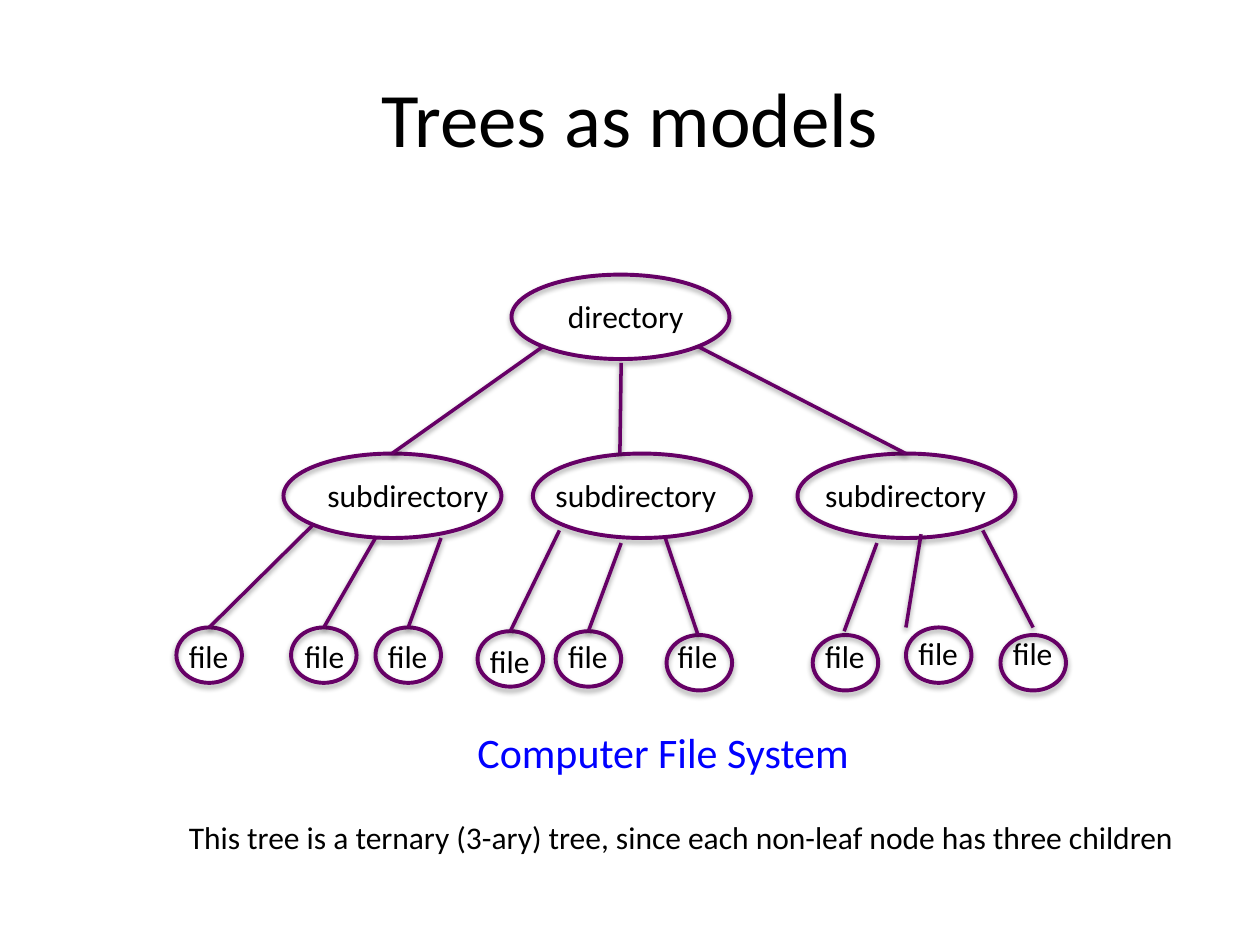
import lxml.etree
import pptx
import pptx.dml.color
import pptx.enum.shapes
import pptx.enum.text
import pptx.oxml.ns
import pptx.util
from pptx.util import Inches

COLOURS = {"text": "000000", "caption": "0000FF", "tree": "660066", "shadow": "000000"}
FONT = "Calibri"
BRANCH_SIZE = (1.73, 0.67)
FILE_SIZE = (0.52, 0.44)
SHADOWS = {
    "node": {"blurRad": 40000, "dist": 23000, "alpha": 35000},
    "edge": {"blurRad": 40000, "dist": 20000, "alpha": 38000},
}
ROOT = ("directory", 2.66, 0, 0.35, 0.13)
SUBDIRECTORIES = [
    ("subdirectory", 0.85, 1.42, 0.25, 0.13),
    ("subdirectory", 2.83, 1.42, 0.08, 0.13),
    ("subdirectory", 4.93, 1.42, 0.12, 0.13),
]
FILES = [
    ("file", 0, 2.8, 0, 0.03),
    ("file", 0.91, 2.8, 0.01, 0.03),
    ("file", 1.58, 2.8, 0, 0.03),
    ("file", 2.39, 2.83, 0, 0.04),
    ("file", 3.01, 2.83, 0, 0),
    ("file", 3.89, 2.86, -0.01, -0.03),
    ("file", 5.05, 2.86, 0, -0.03),
    ("file", 5.79, 2.8, 0, 0),
    ("file", 6.54, 2.86, 0, -0.06),
]
EDGES = [
    (2.91, 0.57, 1.71, 1.42), (3.53, 0.7, 3.52, 1.42), (4.14, 0.57, 5.79, 1.42),
    (1.09, 1.98, 0.26, 2.8), (1.58, 2.09, 1.17, 2.8), (2.1, 2.09, 1.84, 2.8),
    (3.04, 2.03, 2.65, 2.83), (3.53, 2.13, 3.27, 2.83), (3.88, 2.09, 4.14, 2.86),
    (5.56, 2.13, 5.3, 2.83), (5.91, 2.06, 5.79, 2.8), (6.4, 2.03, 6.8, 2.8),
]


def rgb(name):
    """Return the named colour."""
    return pptx.dml.color.RGBColor.from_string(COLOURS[name])


def apply_format(target, values):
    """Set each attribute in values on the target."""
    for name, value in values.items():
        setattr(target, name, value)


def add_text(slide, box, text, size=18, colour="text", wrap=False, align="LEFT", anchor="TOP"):
    """Place one line of text in the box."""
    text_box = slide.shapes.add_textbox(*map(Inches, box))
    frame = text_box.text_frame
    apply_format(frame, {
        "word_wrap": wrap,
        "vertical_anchor": getattr(pptx.enum.text.MSO_ANCHOR, anchor),
    })
    paragraph = frame.paragraphs[0]
    paragraph.alignment = getattr(pptx.enum.text.PP_ALIGN, align)
    run = paragraph.add_run()
    run.text = text
    apply_format(run.font, {"name": FONT, "size": pptx.util.Pt(size)})
    run.font.color.rgb = rgb(colour)


def style_outline(shape, width, kind):
    """Give a tree part its line and soft shadow."""
    shape.line.color.rgb = rgb("tree")
    shape.line.width = pptx.util.Pt(width)
    qn = pptx.oxml.ns.qn
    values = SHADOWS[kind]
    effects = lxml.etree.SubElement(shape.element.spPr, qn("a:effectLst"))
    shadow = lxml.etree.SubElement(
        effects, qn("a:outerShdw"), blurRad=str(values["blurRad"]),
        dist=str(values["dist"]), dir="5400000", rotWithShape="0")
    colour = lxml.etree.SubElement(shadow, qn("a:srgbClr"), val=COLOURS["shadow"])
    lxml.etree.SubElement(colour, qn("a:alpha"), val=str(values["alpha"]))


def add_node(slide, left, top, size, label, label_left, label_top, label_width):
    """Draw an open ellipse with its label."""
    add_text(slide, (left + label_left, top + label_top, label_width, 0.4), label)
    ellipse = slide.shapes.add_shape(
        pptx.enum.shapes.MSO_SHAPE.OVAL, *map(Inches, (left, top, *size)))
    ellipse.fill.background()
    style_outline(ellipse, 2.25, "node")


def add_edge(slide, start, end):
    """Draw one branch of the tree."""
    edge = slide.shapes.add_connector(
        pptx.enum.shapes.MSO_CONNECTOR.STRAIGHT, *map(Inches, (*start, *end)))
    style_outline(edge, 2, "edge")


def add_tree(slide, left, top):
    """Draw the directory tree from its top left corner."""
    levels = [([ROOT], BRANCH_SIZE, 1.13), (SUBDIRECTORIES, BRANCH_SIZE, 1.49),
              (FILES, FILE_SIZE, 0.52)]
    for nodes, size, label_width in levels:
        for label, x, y, label_left, label_top in nodes:
            add_node(slide, left + x, top + y, size, label, label_left, label_top, label_width)
    for start_x, start_y, end_x, end_y in EDGES:
        add_edge(slide, (left + start_x, top + start_y), (left + end_x, top + end_y))


def main():
    """Build and save the slide."""
    presentation = pptx.Presentation()
    apply_format(presentation, {"slide_width": Inches(10), "slide_height": Inches(7.5)})
    slide = presentation.slides.add_slide(presentation.slide_layouts[6])
    add_text(slide, (0.5, 0.3, 9, 1.25), "Trees as models", 44,
             wrap=True, align="CENTER", anchor="MIDDLE")
    add_tree(slide, 1.4, 2.18)
    add_text(slide, (3.69, 5.72, 3.18, 0.5), "Computer File System", 24, "caption")
    add_text(slide, (1.4, 6.44, 8.1, 0.4),
             "This tree is a ternary (3-ary) tree, since each non-leaf node has three children",
             wrap=True)
    presentation.save("out.pptx")


if __name__ == "__main__":
    main()
